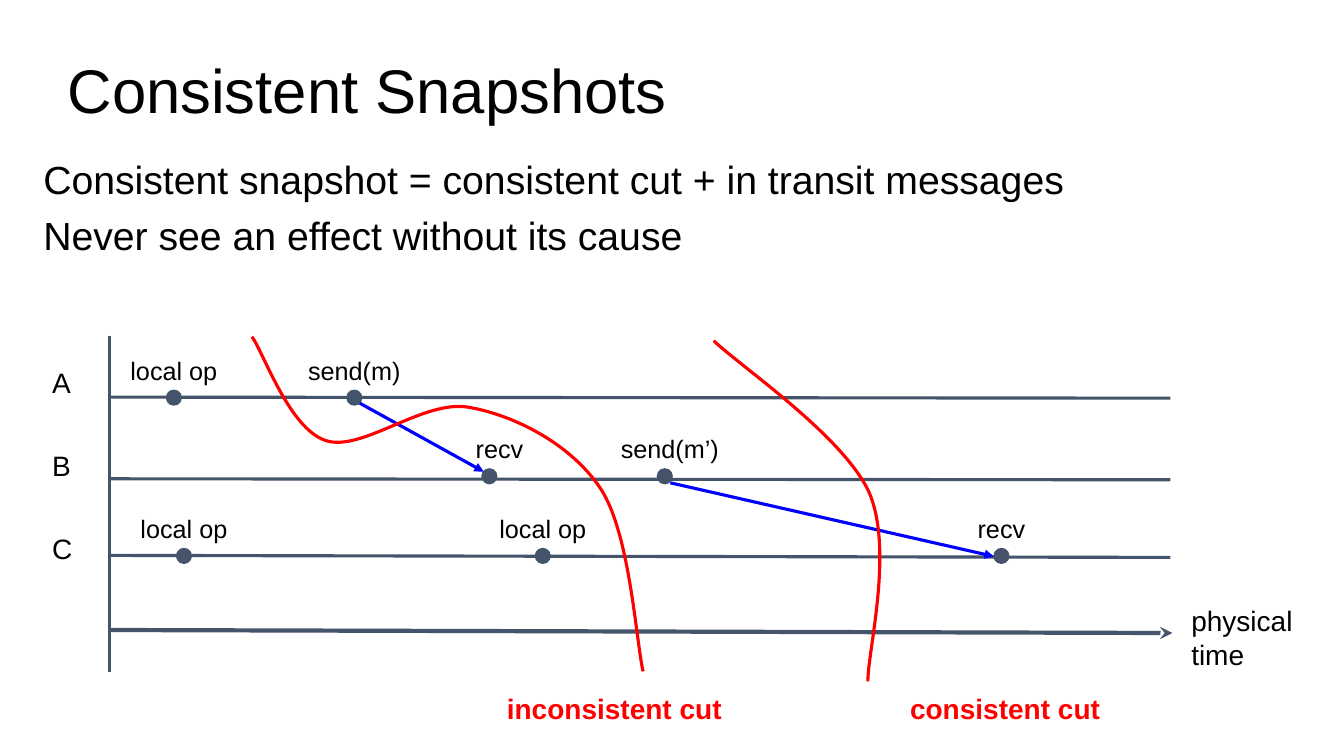
import dataclasses

import lxml.etree
import pptx
import pptx.dml.color
import pptx.enum.shapes
import pptx.enum.text
import pptx.oxml.ns
import pptx.util

# Content: lengths in px, 100 px to the inch
TITLE = "Consistent Snapshots"
POINTS = [
    "Consistent snapshot = consistent cut + in transit messages",
    "Never see an effect without its cause",
]
PROCESSES = [("A", 394, 395), ("B", 475, 476), ("C", 551, 553)]  # name, line start y, end y
DOT_TOPS = {"A": 387, "B": 465, "C": 544}
EVENTS = [  # process, dot left, label, label shift, label width
    ("A", 165, "local op", 0, 126),
    ("A", 344, "send(m)", 0, 135),
    ("B", 478, "recv", 10, 135),
    ("B", 652, "send(m’)", 5, 145),
    ("C", 986, "recv", 0, 145),
    ("C", 175, "local op", 0, 126),
    ("C", 531, "local op", 0, 126),
]
MESSAGES = [((357, 400), (480, 468)), ((665, 479), (986, 552))]
CUTS = [  # start point, then control, control and end point of each curve
    [(250, 334),
     (262, 351), (287, 425), (323, 437),
     (359, 449), (420, 396), (465, 404),
     (511, 412), (567, 441), (596, 485),
     (625, 529), (631, 636), (638, 666)],
    [(708, 338),
     (734, 363), (836, 432), (862, 488),
     (887, 545), (861, 645), (861, 676)],
]
CUT_NAMES = "inconsistent cut\tconsistent cut"
CUT_NAME_TAB = 400
TIME_AXIS = ((109, 625), (1163, 628))
START_LINE = ((109, 333), (109, 667))
DOT = 15
LABEL_RISE = 39


@dataclasses.dataclass(frozen=True)
class Theme:
    font: str = "Arial"
    text: str = "000000"
    timeline: str = "44546A"
    message: str = "0000FF"
    cut: str = "FF0000"
    title_size: int = 44
    body_size: int = 28
    name_size: int = 20
    label_size: int = 18
    stroke: float = 2.25
    axis_stroke: float = 3
    dot_stroke: float = 0.75


THEME = Theme()
QN = pptx.oxml.ns.qn
ALIGN = pptx.enum.text.PP_ALIGN
AUTO_SIZE = pptx.enum.text.MSO_AUTO_SIZE


def px(length):
    return pptx.util.Emu(round(length * 9144))


def rgb(value):
    return pptx.dml.color.RGBColor.from_string(value)


def write_text(shape, lines, size, color=THEME.text, bold=False, align=ALIGN.LEFT,
               spacing=1.0, gap=0, inset=0, anchor=pptx.enum.text.MSO_ANCHOR.TOP,
               auto_size=AUTO_SIZE.NONE, plain_list=False, tab=None):
    frame = shape.text_frame
    frame.word_wrap = True
    frame.auto_size = auto_size
    frame.vertical_anchor = anchor
    frame.margin_left = frame.margin_right = px(inset)
    frame.margin_top = frame.margin_bottom = px(inset)
    for index, line in enumerate(lines):
        paragraph = frame.add_paragraph() if index else frame.paragraphs[0]
        properties = paragraph._p.get_or_add_pPr()
        if plain_list:
            properties.set("marL", "0")
            properties.set("indent", "0")
            lxml.etree.SubElement(properties, QN("a:buNone"))
        if tab:
            tabs = lxml.etree.SubElement(properties, QN("a:tabLst"))
            lxml.etree.SubElement(tabs, QN("a:tab"), pos=str(px(tab)), algn="l")
        paragraph.alignment = align
        paragraph.line_spacing = spacing
        paragraph.space_before = pptx.util.Pt(gap if index else 0)
        run = paragraph.add_run()
        run.text = line
        run.font.name = THEME.font
        run.font.size = pptx.util.Pt(size)
        run.font.bold = bold
        run.font.color.rgb = rgb(color)


def place(shape, left, top, width, height):
    shape.left, shape.top, shape.width, shape.height = map(px, (left, top, width, height))


def add_label(slide, text, left, top, width, height, size, **text_format):
    box = slide.shapes.add_textbox(*map(px, (left, top, width, height)))
    write_text(box, [text], size, inset=10,
               auto_size=AUTO_SIZE.SHAPE_TO_FIT_TEXT, **text_format)


def set_line(shape, color, width):
    shape.line.color.rgb = rgb(color)
    shape.line.width = pptx.util.Pt(width)


def add_line(slide, start, end, color=THEME.timeline, width=THEME.stroke, arrow=None):
    connector = slide.shapes.add_connector(
        pptx.enum.shapes.MSO_CONNECTOR.STRAIGHT, *map(px, start + end))
    set_line(connector, color, width)
    properties = connector._element.spPr
    if arrow:
        outline = properties.find(QN("a:ln"))
        lxml.etree.SubElement(outline, QN("a:tailEnd"), type=arrow)
    lxml.etree.SubElement(properties, QN("a:effectLst"))


def add_cut(slide, points):
    builder = slide.shapes.build_freeform(*map(px, points[0]))
    builder.add_line_segments([tuple(map(px, point)) for point in points[1:]], close=False)
    cut = builder.convert_to_shape()
    # Join every three segments into one cubic curve
    segments = list(cut._element.iter(QN("a:lnTo")))
    for first in range(0, len(segments), 3):
        curve = lxml.etree.Element(QN("a:cubicBezTo"))
        segments[first].addprevious(curve)
        for segment in segments[first:first + 3]:
            curve.append(segment[0])
            segment.getparent().remove(segment)
    cut.shadow.inherit = False
    cut.fill.background()
    set_line(cut, THEME.cut, THEME.stroke)


def add_dot(slide, left, top):
    dot = slide.shapes.add_shape(
        pptx.enum.shapes.MSO_SHAPE.OVAL, *map(px, (left, top, DOT, DOT)))
    dot.shadow.inherit = False
    dot.fill.solid()
    dot.fill.fore_color.rgb = rgb(THEME.timeline)
    set_line(dot, THEME.timeline, THEME.dot_stroke)


def main():
    presentation = pptx.Presentation()
    presentation.slide_width = pptx.util.Emu(12192000)
    presentation.slide_height = px(750)
    slide = presentation.slides.add_slide(presentation.slide_layouts[1])

    # Title and points
    title, body = slide.placeholders
    place(title, 67, 30, 1200, 125)
    write_text(title, [TITLE], THEME.title_size, spacing=0.9,
               anchor=pptx.enum.text.MSO_ANCHOR.MIDDLE)
    place(body, 43, 159, 1200, 251)
    write_text(body, POINTS, THEME.body_size, spacing=0.9, gap=10, plain_list=True)

    # Process timelines and time axis
    for index, (name, start_y, end_y) in enumerate(PROCESSES):
        add_line(slide, (110, start_y), (1161, end_y))
        add_label(slide, name, 42, 353 + 82 * index, 57, 54, THEME.name_size)
    add_line(slide, *TIME_AXIS, width=THEME.axis_stroke, arrow="stealth")
    add_label(slide, "physical time", 1172, 589, 126, 88, THEME.name_size)

    # Events and messages
    for process, left, *_ in EVENTS:
        add_dot(slide, left, DOT_TOPS[process])
    for start, end in MESSAGES:
        add_line(slide, start, end, color=THEME.message, arrow="triangle")
    for process, left, label, shift, width in EVENTS:
        add_label(slide, label, left + DOT / 2 + shift - width / 2,
                  DOT_TOPS[process] - LABEL_RISE, width, 93, THEME.label_size,
                  align=ALIGN.CENTER, spacing=0.8)

    # Start line and cuts
    add_line(slide, *START_LINE)
    for points in CUTS:
        add_cut(slide, points)
    add_label(slide, CUT_NAMES, 493, 676, 655, 54, THEME.name_size,
              color=THEME.cut, bold=True, tab=CUT_NAME_TAB)

    presentation.save("out.pptx")


if __name__ == "__main__":
    main()
